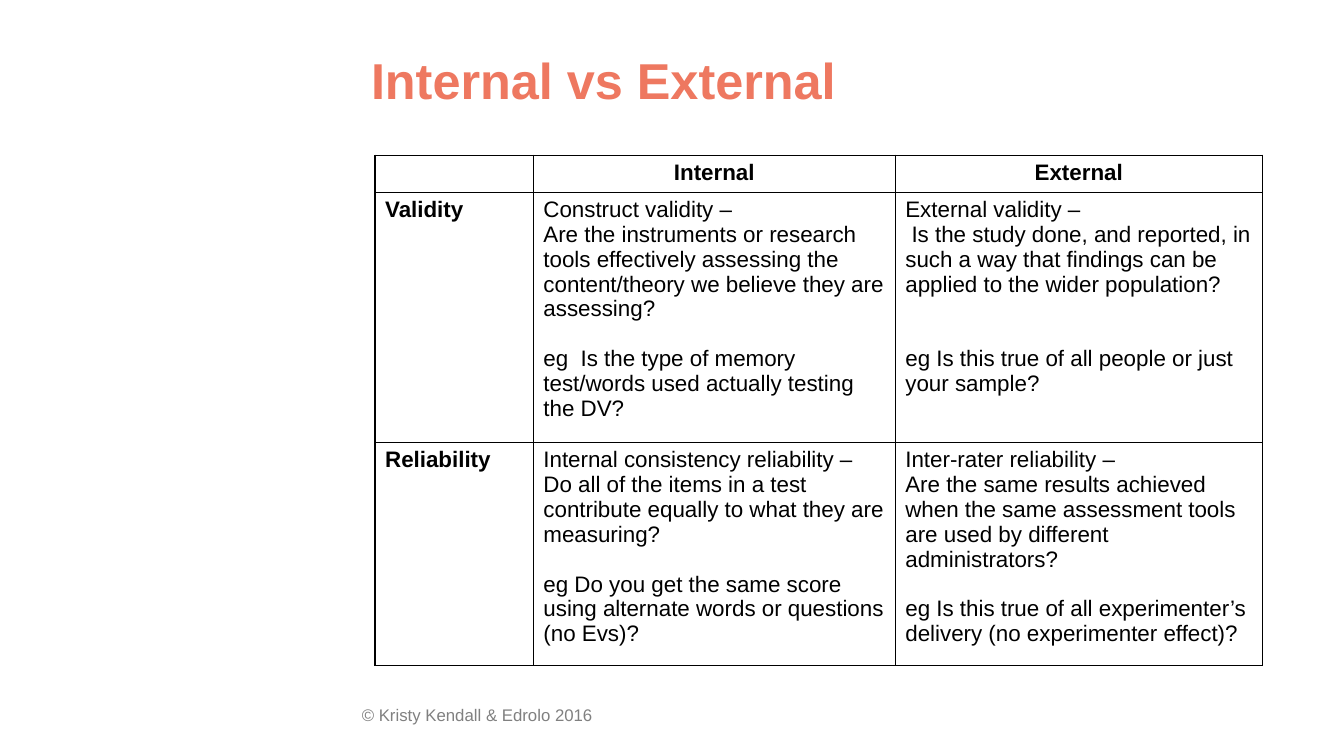
from pptx import Presentation
from pptx.dml.color import RGBColor
from pptx.enum.text import MSO_ANCHOR, PP_ALIGN
from pptx.oxml.ns import qn
from pptx.util import Inches, Pt
from lxml import etree

LEFT, CENTER = PP_ALIGN.LEFT, PP_ALIGN.CENTER
TOP, MIDDLE = MSO_ANCHOR.TOP, MSO_ANCHOR.MIDDLE
BLACK = RGBColor(0x00, 0x00, 0x00)
CORAL = RGBColor(0xEE, 0x78, 0x60)
GRAY = RGBColor(0x80, 0x80, 0x80)

FONT = "Arial"
LINE_GAP = 17.85
COLUMN_WIDTHS = (1.57, 3.59, 3.64)
ROW_HEIGHTS = (0.35, 2.32, 2.07)

CONSTRUCT_VALIDITY = [
    ("Construct validity –", 0),
    ("Are the instruments or research tools effectively assessing the "
     "content/theory we believe they are assessing?", 0),
    ("eg  Is the type of memory test/words used actually testing the DV?", 1),
]
EXTERNAL_VALIDITY = [
    ("External validity –", 0),
    (" Is the study done, and reported, in such a way that findings can be "
     "applied to the wider population?", 0),
    ("eg Is this true of all people or just your sample?", 2),
]
INTERNAL_CONSISTENCY = [
    ("Internal consistency reliability – Do all of the items in a test "
     "contribute equally to what they are measuring?", 0),
    ("eg Do you get the same score using alternate words or questions (no Evs)?", 1),
]
INTER_RATER = [
    ("Inter-rater reliability –", 0),
    ("Are the same results achieved when the same assessment tools are used "
     "by different administrators?", 0),
    ("eg Is this true of all experimenter’s delivery (no experimenter effect)?", 1),
]
COMPARISON = [
    [[("", 0)], [("Internal", 0)], [("External", 0)]],
    [[("Validity", 0)], CONSTRUCT_VALIDITY, EXTERNAL_VALIDITY],
    [[("Reliability", 0)], INTERNAL_CONSISTENCY, INTER_RATER],
]


def write_text(frame, paragraphs, size=16, color=BLACK, bold=False, align=LEFT, anchor=TOP):
    frame.word_wrap = True
    frame.vertical_anchor = anchor
    for index, (text, gap_lines) in enumerate(paragraphs):
        para = frame.add_paragraph() if index else frame.paragraphs[0]
        para.text = text
        para.alignment = align
        para.space_before = Pt(gap_lines * LINE_GAP)
        para.font.name = FONT
        para.font.size = Pt(size)
        para.font.bold = bold
        para.font.color.rgb = color


def add_borders(cell):
    properties = cell._tc.get_or_add_tcPr()
    for side in ("a:lnL", "a:lnR", "a:lnT", "a:lnB"):
        border = etree.SubElement(properties, qn(side), w=str(Pt(1)))
        fill = etree.SubElement(border, qn("a:solidFill"))
        etree.SubElement(fill, qn("a:srgbClr"), val=str(BLACK))


def add_title(page, text):
    title = page.shapes.title
    title.left, title.top = Inches(3.58), Inches(0.16)
    title.width, title.height = Inches(9.17), Inches(1.25)
    write_text(title.text_frame, [(text, 0)], size=36, color=CORAL, bold=True, anchor=MIDDLE)


def add_comparison_table(page, rows):
    table = page.shapes.add_table(
        len(rows), len(rows[0]), Inches(3.72), Inches(1.54),
        Inches(sum(COLUMN_WIDTHS)), Inches(sum(ROW_HEIGHTS))).table
    table.first_row = False
    table.horz_banding = False
    for column, width in zip(table.columns, COLUMN_WIDTHS):
        column.width = Inches(width)
    for row, height in zip(table.rows, ROW_HEIGHTS):
        row.height = Inches(height)
    for row_index, row in enumerate(rows):
        for column_index, paragraphs in enumerate(row):
            cell = table.cell(row_index, column_index)
            write_text(cell.text_frame, paragraphs,
                       bold=row_index == 0 or column_index == 0,
                       align=LEFT if row_index else CENTER)
            add_borders(cell)
            cell.fill.background()


def add_copyright(page, text):
    box = page.shapes.add_textbox(Inches(3.49), Inches(6.94), Inches(4.5), Inches(0.4))
    write_text(box.text_frame, [(text, 0)], size=12, color=GRAY)


def main():
    deck = Presentation()
    deck.slide_width, deck.slide_height = Inches(13.33), Inches(7.5)
    page = deck.slides.add_slide(deck.slide_layouts[5])
    add_copyright(page, "© Kristy Kendall & Edrolo 2016")
    add_comparison_table(page, COMPARISON)
    add_title(page, "Internal vs External")
    deck.save("out.pptx")


if __name__ == "__main__":
    main()
